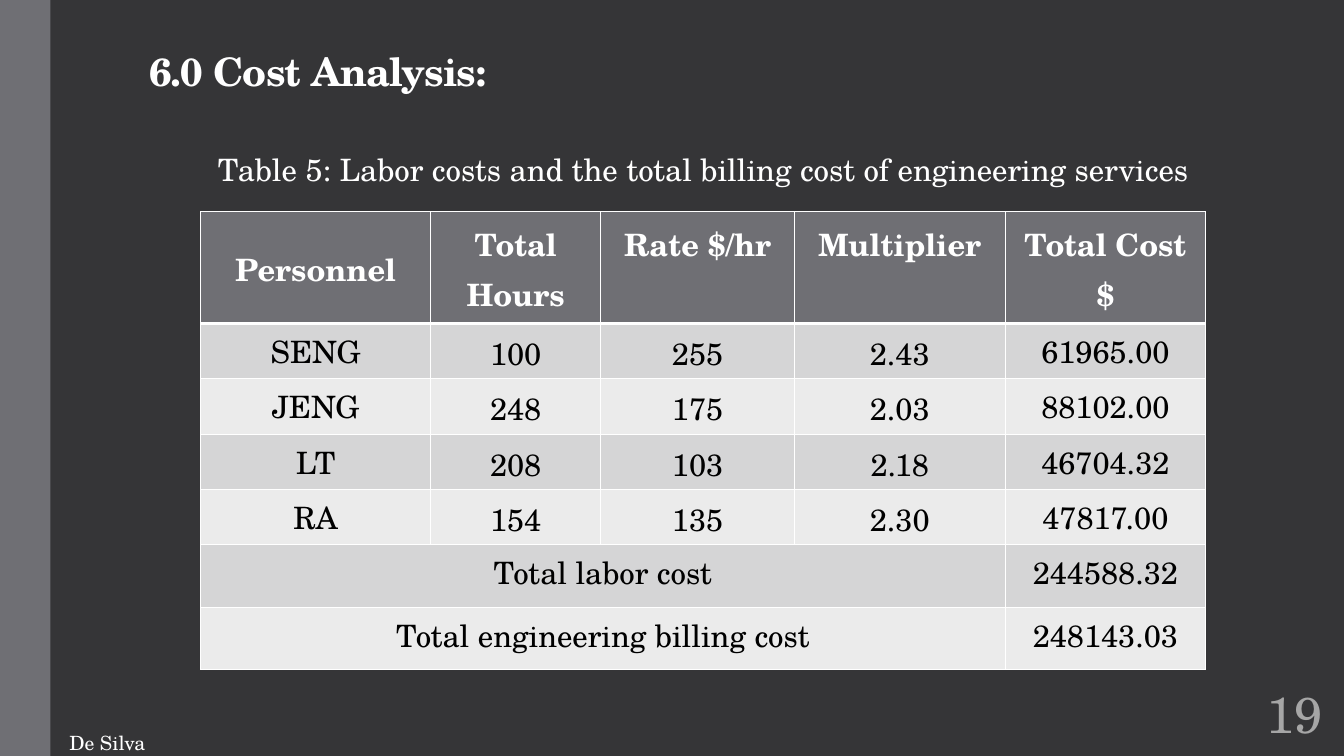
from collections import namedtuple

from lxml.etree import SubElement
from pptx import Presentation
from pptx.dml.color import RGBColor
from pptx.enum.shapes import MSO_SHAPE
from pptx.enum.text import MSO_ANCHOR, MSO_AUTO_SIZE, PP_ALIGN
from pptx.oxml.ns import qn
from pptx.util import Inches, Pt

Box = namedtuple("Box", "left top width height")

SLIDE_WIDTH = Inches(13.33)
SLIDE_HEIGHT = Inches(7.5)
FONT = "TeX Gyre Schola"
WHITE = "FFFFFF"
BLACK = "000000"
GREY = "6F6F74"
BANDS = ["D5D5D6", "EBEBEB"]

HEADINGS = ["Personnel", "Total Hours", "Rate $/hr", "Multiplier", "Total Cost $"]
STAFF = [
    ["SENG", "100", "255", "2.43", "61965.00"],
    ["JENG", "248", "175", "2.03", "88102.00"],
    ["LT", "208", "103", "2.18", "46704.32"],
    ["RA", "154", "135", "2.30", "47817.00"],
]
TOTALS = [
    ["Total labor cost", "", "", "", "244588.32"],
    ["Total engineering billing cost", "", "", "", "248143.03"],
]
COLUMN_SHARES = [2.28, 1.69, 1.92, 2.09, 1.99]
ROW_SHARES = [1.05] + [0.55] * len(STAFF) + [0.62] * len(TOTALS)


def color(value):
    return RGBColor.from_string(value)


def percent_box(left, top, width, height):
    return Box(
        int(SLIDE_WIDTH * left / 100),
        int(SLIDE_HEIGHT * top / 100),
        int(SLIDE_WIDTH * width / 100),
        int(SLIDE_HEIGHT * height / 100),
    )


def write(text_frame, text, size, ink, bold=False, align=PP_ALIGN.CENTER, spacing=None):
    text_frame.text = text
    paragraph = text_frame.paragraphs[0]
    paragraph.alignment = align
    if spacing:
        paragraph.line_spacing = spacing
    for run in paragraph.runs:
        run.font.name = FONT
        run.font.size = Pt(size)
        run.font.bold = bold
        run.font.color.rgb = color(ink)
    return paragraph


def add_text(slide, box, text, size, ink, anchor=MSO_ANCHOR.TOP, wrap=True, **style):
    text_frame = slide.shapes.add_textbox(*box).text_frame
    text_frame.word_wrap = wrap
    text_frame.auto_size = MSO_AUTO_SIZE.NONE
    text_frame.vertical_anchor = anchor
    write(text_frame, text, size, ink, **style)
    return text_frame


def add_side_band(slide, box):
    shape = slide.shapes.add_shape(MSO_SHAPE.RECTANGLE, *box)
    shape.shadow.inherit = False
    shape.fill.solid()
    shape.fill.fore_color.rgb = color(GREY)
    shape.line.fill.background()


def add_title(slide, box):
    text_frame = add_text(
        slide, box, "6.0 Cost Analysis:", 28, WHITE, anchor=MSO_ANCHOR.BOTTOM,
        bold=True, align=PP_ALIGN.LEFT, spacing=0.85,
    )
    text_frame.paragraphs[0].runs[0].font._element.set("spc", "-50")


def add_page_number(slide, box):
    text_frame = add_text(slide, box, "19", 36, "A6A6A6", anchor=MSO_ANCHOR.MIDDLE)
    text_frame.margin_left = text_frame.margin_right = Inches(0.05)


def set_borders(cell, widths):
    properties = cell._tc.get_or_add_tcPr()
    for side, width in widths.items():
        line = SubElement(properties, qn(f"a:ln{side}"), w=str(Pt(width)))
        fill = SubElement(line, qn("a:solidFill"))
        SubElement(fill, qn("a:srgbClr"), val=WHITE)


def style_cell(cell, text, row, column):
    is_header = row == 0
    is_figure = 0 < row <= len(STAFF) and 0 < column < len(HEADINGS) - 1
    set_borders(cell, {"L": 1, "R": 1, "T": 3 if row == 1 else 1, "B": 3 if is_header else 1})
    cell.fill.solid()
    cell.fill.fore_color.rgb = color(GREY if is_header else BANDS[(row - 1) % 2])
    centred = is_figure or (is_header and column == 0)
    cell.vertical_anchor = MSO_ANCHOR.MIDDLE if centred else MSO_ANCHOR.TOP
    if is_figure:
        cell.margin_left = cell.margin_right = cell.margin_top = Inches(0.01)
        cell.margin_bottom = 0
    write(
        cell.text_frame, text, 22, WHITE if is_header else BLACK,
        bold=is_header, spacing=1.07 if is_header or is_figure else None,
    )


def add_cost_table(slide, box):
    rows = [HEADINGS] + STAFF + TOTALS
    table = slide.shapes.add_table(len(rows), len(HEADINGS), *box).table
    table.horz_banding = False
    for column, share in zip(table.columns, COLUMN_SHARES):
        column.width = int(box.width * share / sum(COLUMN_SHARES))
    for row, share in zip(table.rows, ROW_SHARES):
        row.height = int(box.height * share / sum(ROW_SHARES))
    for row, values in enumerate(rows):
        for column, text in enumerate(values):
            style_cell(table.cell(row, column), text, row, column)
    last = len(HEADINGS) - 2
    for row in range(1 + len(STAFF), len(rows)):
        table.cell(row, 0).merge(table.cell(row, last))


def build_cost_slide(presentation):
    slide = presentation.slides.add_slide(presentation.slide_layouts[6])
    slide.background.fill.solid()
    slide.background.fill.fore_color.rgb = color("353537")
    add_side_band(slide, percent_box(0, 0, 3.75, 100))
    add_title(slide, percent_box(10.35, 3.07, 36.68, 10.13))
    add_page_number(slide, percent_box(92.65, 90, 7.35, 8.67))
    add_cost_table(slide, percent_box(14.93, 28, 74.79, 59.73))
    add_text(
        slide, percent_box(14.93, 19.33, 74.79, 6.27),
        "Table 5: Labor costs and the total billing cost of engineering services", 22, WHITE,
    )
    add_text(
        slide, percent_box(4.43, 96, 7.28, 4), "De Silva", 14, WHITE,
        wrap=False, align=PP_ALIGN.LEFT,
    )


def main():
    presentation = Presentation()
    presentation.slide_width = SLIDE_WIDTH
    presentation.slide_height = SLIDE_HEIGHT
    build_cost_slide(presentation)
    presentation.save("out.pptx")


if __name__ == "__main__":
    main()
